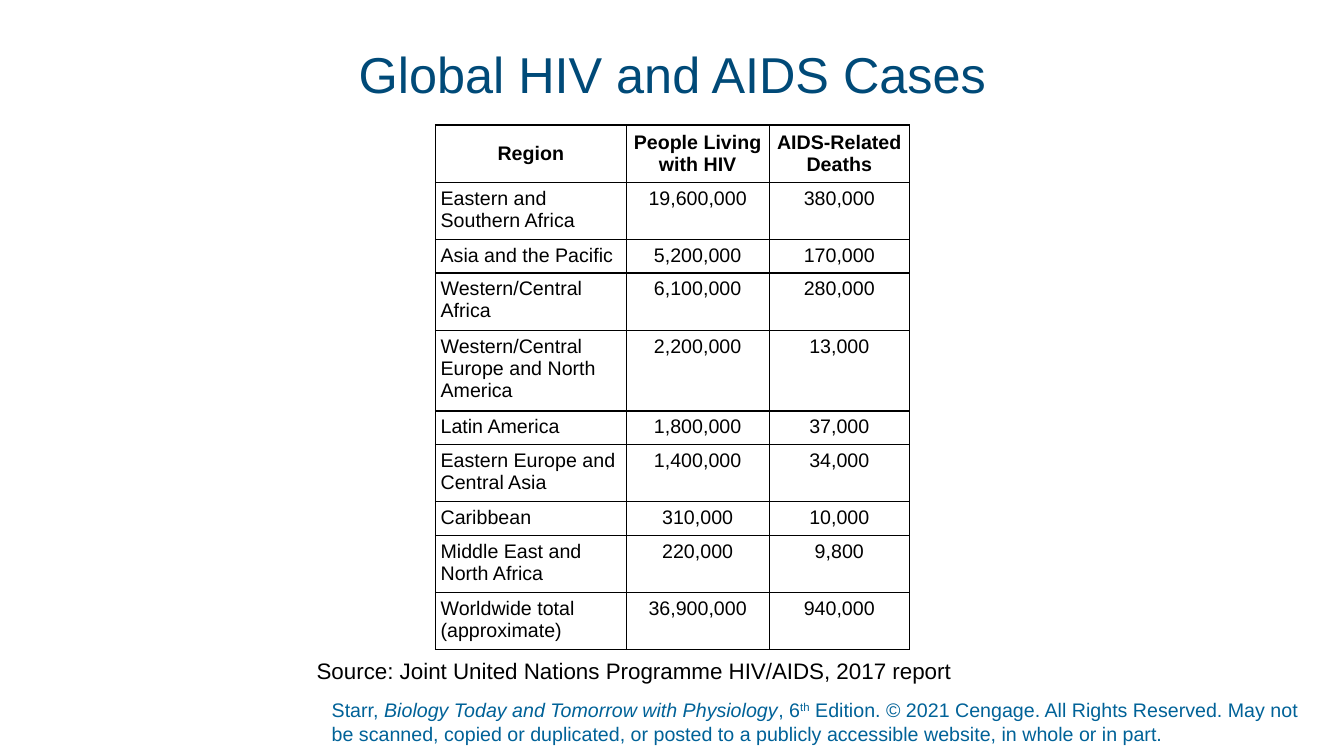
"""Build a slide with a table of global HIV and AIDS cases."""
from lxml.etree import SubElement as Sub
from pptx import Presentation
from pptx.dml.color import RGBColor as Rgb
from pptx.enum.text import MSO_ANCHOR as Anchor, PP_ALIGN as Align
from pptx.oxml.ns import qn
from pptx.util import Inches, Pt

TITLE = "Global HIV and AIDS Cases"
SOURCE = "Source: Joint United Nations Programme HIV/AIDS, 2017 report"
CREDIT = [
    ("Starr, ", ""),
    ("Biology Today and Tomorrow with Physiology", "italic"),
    (", 6", ""),
    ("th", "super"),
    (" Edition. © 2021 Cengage. All Rights Reserved. May not be scanned, "
     "copied or duplicated, or posted to a publicly accessible website, "
     "in whole or in part.", ""),
]
HEAD = ("Region", "People Living\nwith HIV", "AIDS-Related\nDeaths")
DATA = [
    ("Eastern and\nSouthern Africa", "19,600,000", "380,000"),
    ("Asia and the Pacific", "5,200,000", "170,000"),
    ("Western/Central\nAfrica", "6,100,000", "280,000"),
    ("Western/Central\nEurope and North\nAmerica", "2,200,000", "13,000"),
    ("Latin America", "1,800,000", "37,000"),
    ("Eastern Europe and\nCentral Asia", "1,400,000", "34,000"),
    ("Caribbean", "310,000", "10,000"),
    ("Middle East and\nNorth Africa", "220,000", "9,800"),
    ("Worldwide total\n(approximate)", "36,900,000", "940,000"),
]
COLORS = {"title": "004A78", "credit": "006298", "text": "000000"}
GRID = (1333, 750)
COLS = (189, 142, 139)
TABLE = (432, 124)
PAD, LINE = 5, 21


def unit(n):
    """Turn grid steps into a length."""
    return Inches(n / 100)


def add_run(para, text, size, color, style=""):
    """Add one styled run to a paragraph."""
    run = para.add_run()
    run.text = text
    font = run.font
    font.name, font.size = "Arial", Pt(size)
    font.color.rgb = Rgb.from_string(COLORS[color])
    font.bold, font.italic = style == "bold", style == "italic"
    if style == "super":
        run._r.get_or_add_rPr().set("baseline", "30000")


def add_text(slide, box, runs, size, color, anchor=Anchor.TOP, foot=0):
    """Add a text box of one paragraph and return that paragraph."""
    frame = slide.shapes.add_textbox(*map(unit, box)).text_frame
    frame.word_wrap, frame.vertical_anchor = True, anchor
    frame.margin_left = frame.margin_right = frame.margin_top = 0
    frame.margin_bottom = unit(foot)
    para = frame.paragraphs[0]
    for text, style in runs:
        add_run(para, text, size, color, style)
    return para


def add_edges(cell):
    """Draw the four borders of a cell."""
    props = cell._tc.get_or_add_tcPr()
    for side in "LRTB":
        edge = Sub(props, qn(f"a:ln{side}"), w=str(Pt(1)))
        fill = Sub(edge, qn("a:solidFill"))
        Sub(fill, qn("a:srgbClr"), val=COLORS["text"])


def fill_cell(cell, text, head, center):
    """Write and style one table cell."""
    cell.margin_left = cell.margin_right = unit(PAD)
    cell.margin_top = cell.margin_bottom = unit(PAD)
    cell.vertical_anchor = Anchor.MIDDLE if head else Anchor.TOP
    add_edges(cell)
    cell.fill.background()
    frame = cell.text_frame
    for i, line in enumerate(text.split("\n")):
        para = frame.add_paragraph() if i else frame.paragraphs[0]
        para.alignment = Align.CENTER if center else Align.LEFT
        add_run(para, line, 14, "text", "bold" if head else "")


def add_cases(slide):
    """Add the table, each row as high as its longest cell."""
    rows = [HEAD, *DATA]
    highs = [2 * PAD + LINE * max(t.count("\n") + 1 for t in r) for r in rows]
    size = (len(rows), len(COLS))
    box = (*TABLE, sum(COLS), sum(highs))
    table = slide.shapes.add_table(*size, *map(unit, box)).table
    table.first_row = table.horz_banding = False
    for col, wide in zip(table.columns, COLS):
        col.width = unit(wide)
    for r, (row, high) in enumerate(zip(rows, highs)):
        table.rows[r].height = unit(high)
        for c, text in enumerate(row):
            fill_cell(table.cell(r, c), text, r == 0, r == 0 or c > 0)


def main():
    """Lay out the slide and save it."""
    deck = Presentation()
    deck.slide_width, deck.slide_height = map(unit, GRID)
    slide = deck.slides.add_slide(deck.slide_layouts[6])
    add_text(slide, (329, 692, 979, 52), CREDIT, 14, "credit",
             Anchor.BOTTOM, PAD)
    title = add_text(slide, (92, 40, 1150, 74), [(TITLE, "")], 36, "title",
                     Anchor.MIDDLE)
    title.alignment, title.line_spacing = Align.CENTER, 0.9
    add_cases(slide)
    add_text(slide, (314, 652, 742, 32), [(SOURCE, "")], 16, "text")
    deck.save("out.pptx")


if __name__ == "__main__":
    main()
